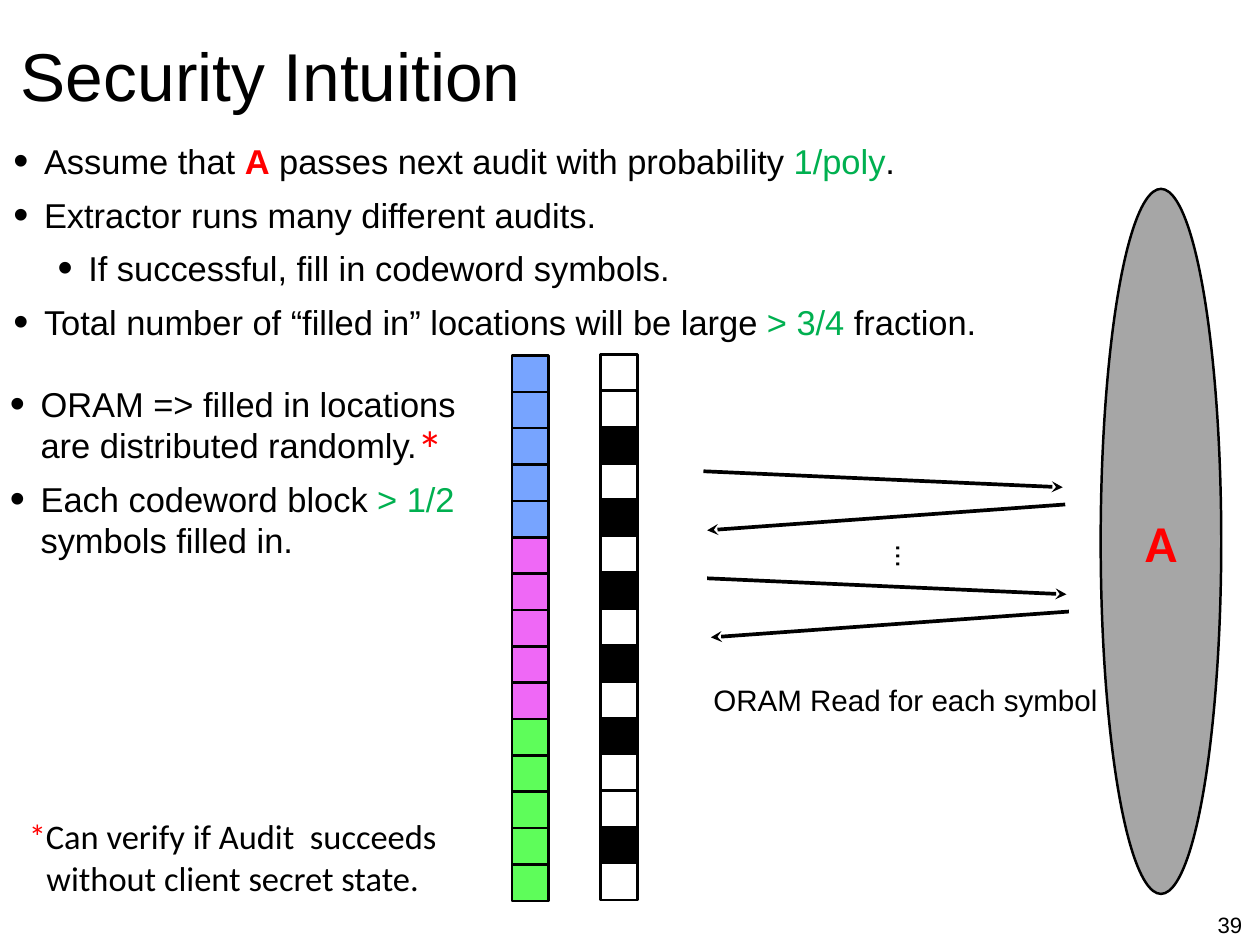
from dataclasses import dataclass

from lxml.etree import SubElement as Sub
from pptx import Presentation
from pptx.dml.color import RGBColor as Rgb
from pptx.enum.shapes import MSO_CONNECTOR as Line, MSO_SHAPE as Kind
from pptx.enum.text import MSO_ANCHOR as Anchor, MSO_AUTO_SIZE as Fit, PP_ALIGN as Align
from pptx.oxml.ns import qn
from pptx.util import Pt


@dataclass(frozen=True)
class Theme:
    """Holds the colours, fonts and type sizes of the slide."""
    ink: str = "000000"
    red: str = "FF0000"
    green: str = "00B050"
    white: str = "FFFFFF"
    grey: str = "A6A6A6"
    blocks: tuple = ("77A4FF", "EF68F6", "5EFD5A")
    sans: str = "Arial"
    note: str = "Calibri"
    title: int = 55
    big: int = 42
    body: int = 28
    label: int = 24
    page: int = 18


T = Theme()


def add_run(para, text, size, color=T.ink, font=T.sans, bold=False):
    """Add one styled run to a paragraph."""
    run = para.add_run()
    run.text = text
    run.font.size, run.font.name, run.font.bold = Pt(size), font, bold
    run.font.color.rgb = Rgb.from_string(color)


def add_box(slide, box, wrap=True, inset=0, anchor=Anchor.TOP):
    """Add an empty text box and return its frame."""
    frame = slide.shapes.add_textbox(*map(Pt, box)).text_frame
    frame.word_wrap, frame.vertical_anchor = wrap, anchor
    frame.margin_left = frame.margin_right = Pt(inset)
    frame.margin_top = frame.margin_bottom = Pt(inset / 2)
    return frame


def add_shape(slide, kind, box, fill):
    """Add a filled shape with a black outline."""
    shape = slide.shapes.add_shape(kind, *map(Pt, box))
    shape.shadow.inherit = False
    shape.fill.solid()
    shape.fill.fore_color.rgb = Rgb.from_string(fill)
    shape.line.color.rgb = Rgb.from_string(T.ink)
    shape.line.width = Pt(2)
    return shape


def add_arrow(slide, start, tip):
    """Draw an arrow from start to tip."""
    arrow = slide.shapes.add_connector(Line.STRAIGHT, *map(Pt, start + tip))
    arrow.line.color.rgb = Rgb.from_string(T.ink)
    arrow.line.width = Pt(3)
    Sub(arrow.line._get_or_add_ln(), qn("a:tailEnd"), type="stealth")
    Sub(arrow._element.spPr, qn("a:effectLst"))


def add_title(slide, box, text):
    """Place and format the title."""
    title = slide.shapes.title
    title.left, title.top, title.width, title.height = map(Pt, box)
    frame = title.text_frame
    frame.auto_size, frame.vertical_anchor = Fit.NONE, Anchor.MIDDLE
    frame.margin_left = frame.margin_right = frame.margin_top = frame.margin_bottom = 0
    para = frame.paragraphs[0]
    para.alignment, para.space_before = Align.LEFT, Pt(20)
    add_run(para, text, T.title)


def add_list(slide, box, items):
    """Add a bulleted list of (level, runs) items."""
    frame = add_box(slide, box)
    for i, (level, runs) in enumerate(items):
        para = frame.add_paragraph() if i else frame.paragraphs[0]
        para.level, para.space_before = level, Pt(10)
        props = para._p.get_or_add_pPr()
        props.set("marL", str(Pt(25 + 36 * level)))
        props.set("indent", str(-Pt(25)))
        Sub(props, qn("a:buSzPct"), val="125000")
        Sub(props, qn("a:buFont"), typeface=T.sans)
        Sub(props, qn("a:buChar"), char="•")
        for text, *style in runs:
            add_run(para, text, T.body, *style)


def add_strip(slide, box, fills):
    """Stack one square cell per fill down the box."""
    left, top, side, height = box
    step = (height - side) / (len(fills) - 1)
    for i, fill in enumerate(fills):
        add_shape(slide, Kind.RECTANGLE, (left, top + i * step, side, side), fill)


def add_reads(slide, box):
    """Draw the two rounds of reads, the dots and the caption."""
    left, top, width, height = box
    for x, y in ((left, top), (left + 3, top + 87)):
        add_arrow(slide, (x, y), (x + 292, y + 13))
        add_arrow(slide, (x + 294, y + 27), (x + 3, y + 48))
    dots = (left + 135.3, top + 47, 28.8, 35)
    caption = (left + 8, top + height - 29, width - 8, 29)
    for spot, text, turn in ((dots, "...", 270), (caption, "ORAM Read for each symbol", 0)):
        frame = add_box(slide, spot, wrap=False, anchor=Anchor.MIDDLE)
        frame._parent.rotation = turn
        frame.paragraphs[0].space_before = Pt(24)
        add_run(frame.paragraphs[0], text, T.label)


def add_server(slide, box):
    """Draw the ellipse for the party A."""
    frame = add_shape(slide, Kind.OVAL, box, T.grey).text_frame
    frame.vertical_anchor = Anchor.MIDDLE
    frame.paragraphs[0].alignment = Align.CENTER
    add_run(frame.paragraphs[0], "A", T.big, T.red, T.note, True)


def add_note(slide, box, runs, wrap=True, inset=7.2):
    """Add a centred note built from runs."""
    frame = add_box(slide, box, wrap, inset)
    frame.paragraphs[0].alignment = Align.CENTER
    for run in runs:
        add_run(frame.paragraphs[0], *run)


def main():
    """Build the slide and save it."""
    deck = Presentation()
    deck.slide_width, deck.slide_height = Pt(1024), Pt(768)
    slide = deck.slides.add_slide(deck.slide_layouts[5])

    add_title(slide, (17, 25.5, 997, 70), "Security Intuition")
    add_list(slide, (10.8, 113.8, 993, 175), [
        (0, [("Assume that ",), ("A", T.red, T.sans, True),
             (" passes next audit with probability ",), ("1/poly", T.green), (".",)]),
        (0, [("Extractor runs many different audits.",)]),
        (1, [("If successful, fill in codeword symbols.",)]),
        (0, [("Total number of “filled in” locations will be large ",),
             ("> 3/4 ", T.green), ("fraction.",)]),
    ])
    add_list(slide, (8, 311, 384, 175), [
        (0, [("ORAM => filled in locations are distributed randomly.",)]),
        (0, [("Each codeword block ",), ("> 1/2 ", T.green), ("symbols filled in.",)]),
    ])

    add_strip(slide, (416, 289, 30, 443.5), [fill for fill in T.blocks for _ in range(5)])
    filled = {2, 4, 6, 8, 10, 13}
    add_strip(slide, (488, 288, 30, 443.5), [T.ink if i in filled else T.white for i in range(15)])
    add_reads(slide, (571.7, 383, 323, 200))
    add_server(slide, (894.5, 153.5, 98, 573))

    add_note(slide, (0, 659, 378, 75), [
        ("*", T.body, T.red, T.note),
        ("Can verify if Audit  succeeds without client secret state.", T.body, T.ink, T.note)])
    add_note(slide, (332, 335, 31, 58), [("*", T.big, T.red, T.note)], wrap=False)
    add_note(slide, (980, 741, 39, 22), [("39", T.page)], inset=0)
    deck.save("out.pptx")


if __name__ == "__main__":
    main()
